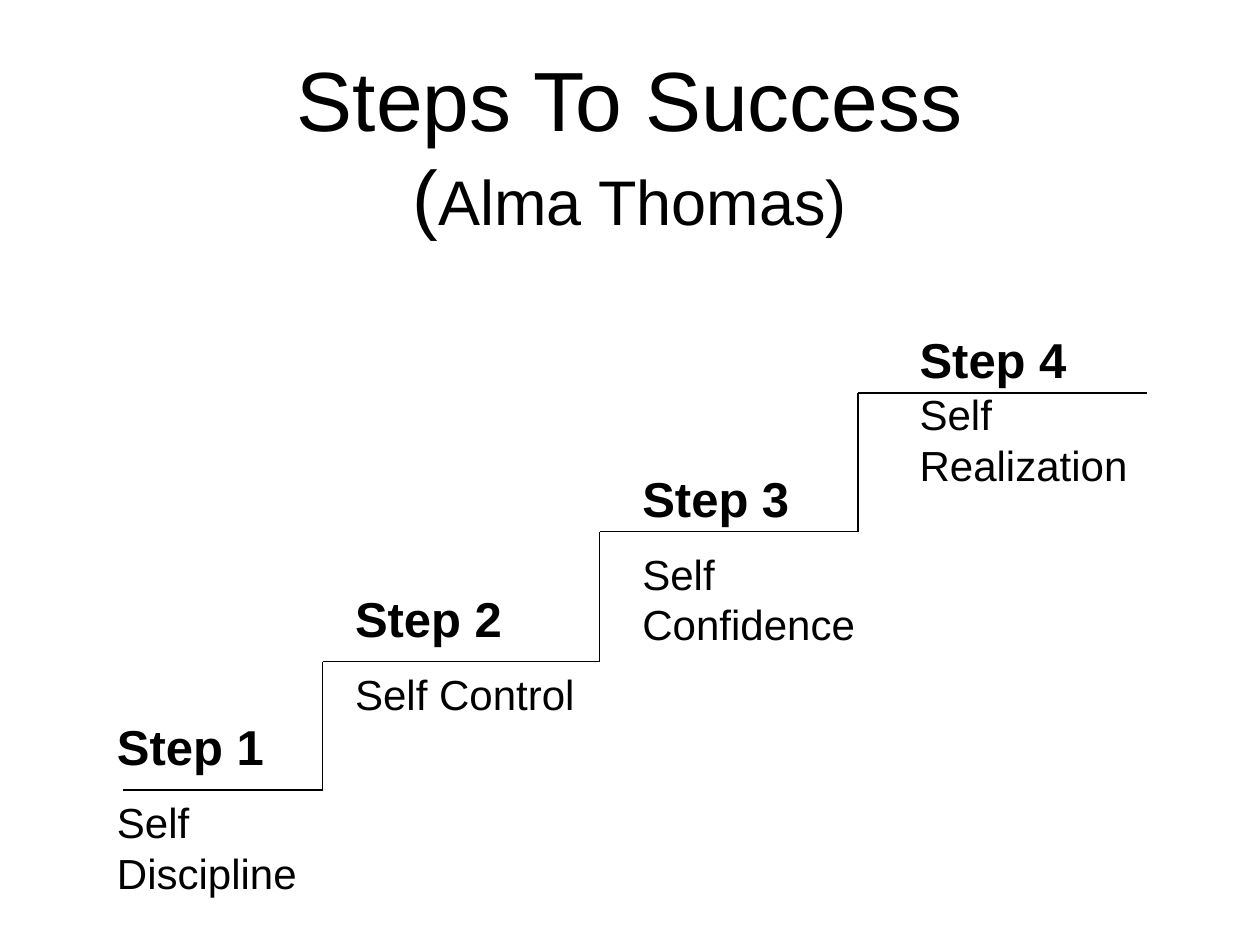
from itertools import pairwise

from lxml.etree import SubElement
from pptx import Presentation
from pptx.dml.color import RGBColor
from pptx.enum.shapes import MSO_CONNECTOR
from pptx.enum.text import MSO_ANCHOR, MSO_AUTO_SIZE, PP_ALIGN
from pptx.oxml.ns import qn
from pptx.util import Inches, Pt

BLACK = "000000"
FONT = "Arial"

STEPS = [
    ("Step 1", "Self Discipline", (0.83, 5.64, 2.2, 1.57), 12),
    ("Step 2", "Self Control", (2.72, 4.62, 1.97, 1.17), 12),
    ("Step 3", "Self Confidence", (5, 3.67, 2.05, 1.57), 12),
    ("Step 4", "Self Realization", (7.2, 2.57, 2.28, 1.37), 0),
]
STAIR_EDGES = [0.98, 2.56, 4.76, 6.81, 9.1]
STAIR_LEVELS = [6.27, 5.25, 4.22, 3.12]


def color(hex_string):
    return RGBColor.from_string(hex_string)


def add_run(paragraph, text, size, bold=False):
    run = paragraph.add_run()
    run.text = text
    run.font.name = FONT
    run.font.size = Pt(size)
    run.font.bold = bold
    run.font.color.rgb = color(BLACK)


def add_text_frame(slide, box):
    frame = slide.shapes.add_textbox(*map(Inches, box)).text_frame
    frame.word_wrap = True
    return frame


def add_title(slide):
    frame = add_text_frame(slide, (0.5, 0.28, 9, 1.73))
    frame.vertical_anchor = MSO_ANCHOR.MIDDLE
    title = frame.paragraphs[0]
    title.alignment = PP_ALIGN.CENTER
    add_run(title, "Steps To Success", 48)
    title.add_line_break()
    add_run(title, "(", 44)
    add_run(title, "Alma Thomas)", 36)


def add_step(slide, heading, quality, box, gap):
    frame = add_text_frame(slide, box)
    frame.auto_size = MSO_AUTO_SIZE.SHAPE_TO_FIT_TEXT
    add_run(frame.paragraphs[0], heading, 28, bold=True)
    detail = frame.add_paragraph()
    detail.space_before = Pt(gap)
    add_run(detail, quality, 24)


def add_line(slide, start, end):
    line = slide.shapes.add_connector(
        MSO_CONNECTOR.STRAIGHT, *map(Inches, start + end)
    )
    line.line.color.rgb = color(BLACK)
    line.line.width = Pt(0.75)
    SubElement(line._element.spPr, qn("a:effectLst"))


def add_staircase(slide):
    corners = []
    for (left, right), level in zip(pairwise(STAIR_EDGES), STAIR_LEVELS):
        corners += [(left, level), (right, level)]
    for start, end in pairwise(corners):
        add_line(slide, start, end)


def main():
    presentation = Presentation()
    presentation.slide_width = Inches(10)
    presentation.slide_height = Inches(7.5)
    slide = presentation.slides.add_slide(presentation.slide_layouts[6])
    add_title(slide)
    for step in STEPS:
        add_step(slide, *step)
    add_staircase(slide)
    presentation.save("out.pptx")


if __name__ == "__main__":
    main()
